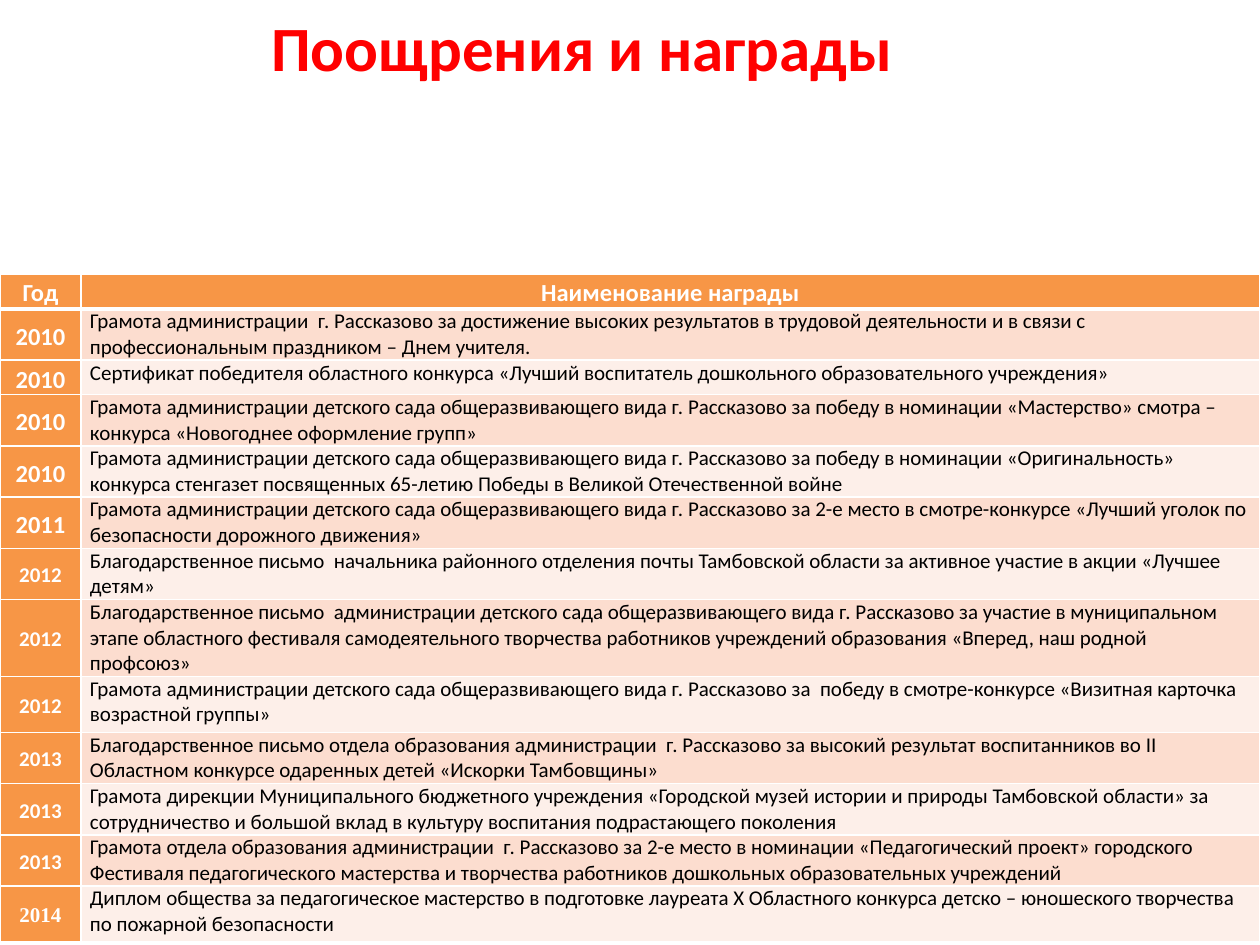
from lxml import etree
from pptx import Presentation
from pptx.dml.color import RGBColor
from pptx.enum.text import MSO_ANCHOR, MSO_AUTO_SIZE, PP_ALIGN
from pptx.oxml.ns import qn
from pptx.util import Emu, Pt

CENTER, LEFT = PP_ALIGN.CENTER, PP_ALIGN.LEFT
TOP, MIDDLE = MSO_ANCHOR.TOP, MSO_ANCHOR.MIDDLE
NO_AUTOFIT = MSO_AUTO_SIZE.NONE
TITLE_ONLY = 5

EMU_PER_PX = 914400 // 126
PAGE_WIDTH, PAGE_HEIGHT = 1260, 945

RED = RGBColor(0xFF, 0x00, 0x00)
WHITE = RGBColor(0xFF, 0xFF, 0xFF)
BLACK = RGBColor(0x00, 0x00, 0x00)
ORANGE = RGBColor(0xF7, 0x96, 0x46)
BANDS = (RGBColor(0xFC, 0xDD, 0xCF), RGBColor(0xFD, 0xEF, 0xE9))

SANS, SERIF = "Calibri", "Times New Roman"
COLUMN_WIDTHS = (81, 1179)
HEADER_HEIGHT = 35
HEADERS = ("Год", "Наименование награды")
KINDERGARTEN = "Грамота администрации детского сада общеразвивающего вида г. Рассказово за "

# Row height, year, year size, year font, award
AWARDS = (
    (49, "2010", 14, SANS, "Грамота администрации  г. Рассказово за достижение высоких результатов "
     "в трудовой деятельности и в связи с профессиональным праздником – Днем учителя."),
    (32, "2010", 14, SANS, "Сертификат победителя областного конкурса «Лучший воспитатель "
     "дошкольного образовательного учреждения»"),
    (49, "2010", 14, SANS, KINDERGARTEN + "победу в номинации «Мастерство» смотра – "
     "конкурса «Новогоднее оформление групп»"),
    (49, "2010", 14, SANS, KINDERGARTEN + "победу в номинации «Оригинальность» конкурса "
     "стенгазет посвященных 65-летию Победы в Великой Отечественной войне"),
    (49, "2011", 14, SANS, KINDERGARTEN + "2-е место в смотре-конкурсе «Лучший уголок "
     "по безопасности дорожного движения»"),
    (49, "2012", 12, SANS, "Благодарственное письмо  начальника районного отделения почты "
     "Тамбовской области за активное участие в акции «Лучшее детям»"),
    (73, "2012", 12, SANS, "Благодарственное письмо  администрации детского сада общеразвивающего "
     "вида г. Рассказово за участие в муниципальном этапе областного фестиваля самодеятельного "
     "творчества работников учреждений образования «Вперед, наш родной профсоюз»"),
    (56, "2012", 12, SANS, KINDERGARTEN + " победу в смотре-конкурсе «Визитная карточка "
     "возрастной группы»"),
    (49, "2013", 12, SANS, "Благодарственное письмо отдела образования администрации  "
     "г. Рассказово за высокий результат воспитанников во II Областном конкурсе одаренных "
     "детей «Искорки Тамбовщины»"),
    (49, "2013", 12, SANS, "Грамота дирекции Муниципального бюджетного учреждения «Городской "
     "музей истории и природы Тамбовской области» за сотрудничество и большой вклад в культуру "
     "воспитания подрастающего поколения"),
    (49, "2013", 12, SANS, "Грамота отдела образования администрации  г. Рассказово за 2-е место "
     "в номинации «Педагогический проект» городского Фестиваля педагогического мастерства "
     "и творчества работников дошкольных образовательных учреждений"),
    (56, "2014", 12, SERIF, "Диплом общества за педагогическое мастерство в подготовке лауреата "
     "X Областного конкурса детско – юношеского творчества по пожарной безопасности"),
)


def px(length):
    return Emu(length * EMU_PER_PX)


def write(frame, text, size, color, bold, font=SANS, align=LEFT, spacing=1.0):
    para = frame.paragraphs[0]
    para.alignment = align
    para.line_spacing = spacing
    span = para.add_run()
    span.text = text
    span.font.name = font
    span.font.size = Pt(size)
    span.font.bold = bold
    span.font.color.rgb = color


def add_title(page, text):
    title = page.shapes.title
    title.left, title.top, title.width, title.height = px(15), px(-4), px(1134), px(100)
    frame = title.text_frame
    frame.auto_size = NO_AUTOFIT
    frame.vertical_anchor = MIDDLE
    write(frame, text, 36, RED, True, align=CENTER)


def set_borders(cell, top=1, bottom=1):
    properties = cell._tc.get_or_add_tcPr()
    for side, points in (("L", 1), ("R", 1), ("T", top), ("B", bottom)):
        line = etree.SubElement(properties, qn(f"a:ln{side}"), w=str(Pt(points)))
        fill = etree.SubElement(line, qn("a:solidFill"))
        etree.SubElement(fill, qn("a:srgbClr"), val=str(WHITE))


def style_cell(cell, color, anchor=TOP, **borders):
    set_borders(cell, **borders)
    cell.fill.solid()
    cell.fill.fore_color.rgb = color
    cell.vertical_anchor = anchor
    cell.margin_left = cell.margin_right = px(9)
    cell.margin_top = cell.margin_bottom = 0


def add_awards_table(page):
    heights = [HEADER_HEIGHT] + [award[0] for award in AWARDS]
    table = page.shapes.add_table(len(heights), len(COLUMN_WIDTHS), px(0), px(274),
                                  px(sum(COLUMN_WIDTHS)), px(sum(heights))).table
    for column, width in zip(table.columns, COLUMN_WIDTHS):
        column.width = px(width)
    for row, height in zip(table.rows, heights):
        row.height = px(height)

    # Header row with a thick rule below
    for column, text in enumerate(HEADERS):
        cell = table.cell(0, column)
        style_cell(cell, ORANGE, bottom=3)
        write(cell.text_frame, text, 14, WHITE, True, align=CENTER, spacing=1.15)

    # Year and award rows in alternating bands
    for row, (_, year, size, font, award) in enumerate(AWARDS, start=1):
        top = 3 if row == 1 else 1
        year_cell, award_cell = table.cell(row, 0), table.cell(row, 1)
        style_cell(year_cell, ORANGE, MIDDLE, top=top)
        write(year_cell.text_frame, year, size, WHITE, True, font, CENTER, 1.15)
        style_cell(award_cell, BANDS[(row - 1) % 2], top=top)
        write(award_cell.text_frame, award, 12, BLACK, False)


def main():
    deck = Presentation()
    deck.slide_width, deck.slide_height = px(PAGE_WIDTH), px(PAGE_HEIGHT)
    page = deck.slides.add_slide(deck.slide_layouts[TITLE_ONLY])
    add_title(page, "Поощрения и награды")
    add_awards_table(page)
    deck.save("out.pptx")


if __name__ == "__main__":
    main()
